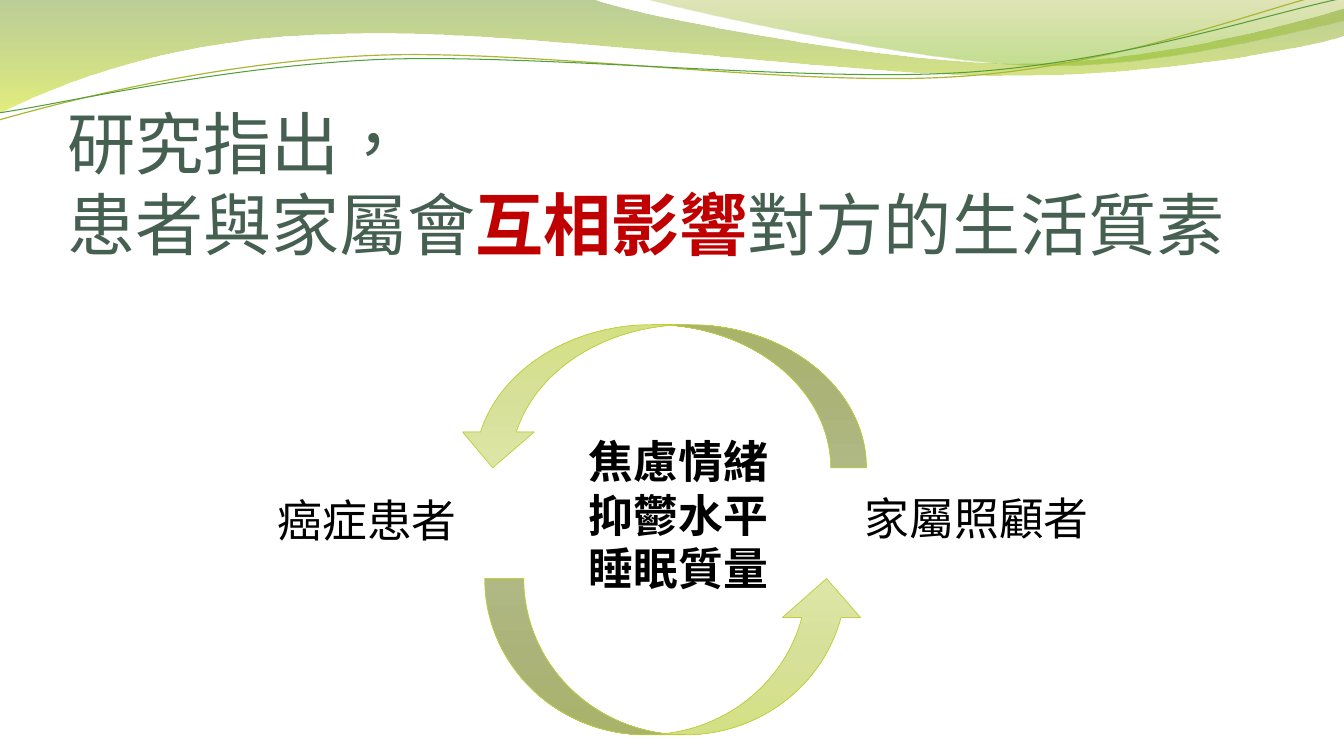
from lxml import etree
from pptx import Presentation
from pptx.dml.color import RGBColor
from pptx.enum.shapes import MSO_SHAPE
from pptx.enum.text import MSO_ANCHOR, PP_ALIGN
from pptx.oxml import parse_xml
from pptx.oxml.ns import qn
from pptx.util import Inches, Pt

ARROW = MSO_SHAPE.CURVED_UP_ARROW
BOTTOM = MSO_ANCHOR.BOTTOM
LEFT, CENTER = PP_ALIGN.LEFT, PP_ALIGN.CENTER
W, H = 13.33, 7.5
FONT = "Noto Sans CJK SC"
UNITS = 1000  # freeform units per inch
A_NS = "http://schemas.openxmlformats.org/drawingml/2006/main"

# Waves: start point, then cubic curves (6 numbers) or straight lines (2 numbers)
BANDS = [
    ([(0, 0), (5.87, -0.01), (6.34, 0.17, 8.84, 0.63, 10.11, 0.63),
      (11.37, 0.63, 12.77, 0.26, 13.33, 0.09), (13.34, 0.36),
      (13.11, 0.44, 11.59, 0.76, 9.94, 0.75),
      (8.29, 0.75, 5.09, 0.28, 3.43, 0.34),
      (1.72, 0.36, 0.61, 0.83, -0.02, 1.13)],
     [(0, "69921C", 45), (100, "CCE10F", 55)]),
    ([(6.38, -0.01), (6.79, 0.11, 9.09, 0.62, 10.25, 0.65),
      (11.4, 0.69, 12.82, 0.32, 13.33, 0.21), (13.33, 0)],
     [(0, "9BAA1A", 30), (80, "81BA16", 45)]),
]
STRANDS = [
    ([(-0.01, 1.19), (0.63, 1.01, 2.1, 0.62, 3.69, 0.55),
      (5.27, 0.48, 7.89, 0.87, 9.49, 0.76),
      (11.1, 0.66, 12.51, 0.08, 13.3, -0.1)], "A9B733", 0.85),
    ([(-0.01, 1.12), (0.62, 1.03, 2.18, 0.66, 3.77, 0.59),
      (5.37, 0.53, 7.96, 0.82, 9.55, 0.72),
      (11.14, 0.62, 12.55, 0.14, 13.33, -0.02)], "549E39", 0.75),
]
ARROW_STOPS = [(0, "DDE6A6", 100), (50, "D7E098", 100), (100, "D4E084", 100)]


def color(value):
    return RGBColor.from_string(value)


def set_line(shape, value, width):
    shape.line.color.rgb = color(value)
    shape.line.width = Pt(width)


def set_gradient(shape, stops):
    """Fill from top to bottom; each stop is position, colour, opacity."""
    shape.fill.background()
    gs = "".join(
        f'<a:gs pos="{pos * 1000}"><a:srgbClr val="{value}">'
        f'<a:alpha val="{opacity * 1000}"/></a:srgbClr></a:gs>'
        for pos, value, opacity in stops)
    grad = parse_xml(f'<a:gradFill xmlns:a="{A_NS}" rotWithShape="1"><a:gsLst>{gs}'
                     '</a:gsLst><a:lin ang="5400000" scaled="0"/></a:gradFill>')
    spPr = shape.element.spPr
    spPr.replace(spPr.find(qn("a:noFill")), grad)


def set_font(font, size, value, bold=False):
    font.name, font.size, font.bold = FONT, Pt(size), bold
    font.color.rgb = color(value)


def format_frame(tf, align):
    tf.word_wrap = True
    tf.vertical_anchor = BOTTOM
    tf.margin_left = tf.margin_right = tf.margin_bottom = 0
    tf.margin_top = Inches(0.05)
    for p in tf.paragraphs:
        p.alignment = align
        # Chinese language and typeface for every run
        for r in p.runs:
            r.font.name = FONT
            rPr = r.font._element
            rPr.set("lang", "zh-TW")
            etree.SubElement(rPr, qn("a:ea")).set("typeface", FONT)


def add_wave(s, segments, close):
    """Draw the corner points, then join each curve's three into a cubic."""
    points = [(seg[i] * UNITS, seg[i + 1] * UNITS)
              for seg in segments for i in range(0, len(seg), 2)]
    builder = s.shapes.build_freeform(*points[0], scale=Inches(1) / UNITS)
    builder.add_line_segments(points[1:], close=close)
    sp = builder.convert_to_shape()
    lines = iter(list(sp.element.iter(qn("a:lnTo"))))
    for seg in segments[1:]:
        first = next(lines)
        if len(seg) == 6:
            first.tag = qn("a:cubicBezTo")
            for line in (next(lines), next(lines)):
                first.append(line[0])
                line.getparent().remove(line)
    sp.shadow.inherit = False
    return sp


def add_header(s):
    for segments, stops in BANDS:
        sp = add_wave(s, segments, True)
        set_gradient(sp, stops)
        sp.line.fill.background()
    for segments, value, width in STRANDS:
        sp = add_wave(s, segments, False)
        sp.fill.background()
        set_line(sp, value, width)


def add_title(s, x, y, w, h):
    title = s.shapes.title
    title.left, title.top, title.width, title.height = map(Inches, (x, y, w, h))
    tf = title.text_frame
    p = tf.paragraphs[0]
    for text, value, bold in [("研究指出，", "455F51", False),
                              ("患者與家屬會", "455F51", False),
                              ("互相影響", "C00000", True),
                              ("對方的生活質素", "455F51", False)]:
        r = p.add_run()
        r.text = text
        set_font(r.font, 48.6, value, bold)
        if text.endswith("，"):
            p.add_line_break()
    format_frame(tf, LEFT)


def add_label(s, lines, x, y, w, h, bold=False):
    tf = s.shapes.add_textbox(*map(Inches, (x, y, w, h))).text_frame
    tf.text = "\n".join(lines)
    for p in tf.paragraphs:
        set_font(p.font, 32, "000000", bold)
    format_frame(tf, CENTER)


def add_arrow(s, x, y, w, h, rotation=0):
    sp = s.shapes.add_shape(ARROW, *map(Inches, (x, y, w, h)))
    sp.rotation = rotation
    sp.shadow.inherit = False
    set_gradient(sp, ARROW_STOPS)
    set_line(sp, "C0CF3A", 0.5)


def add_cycle(s, x, y, w, h):
    """Two arrows circling the shared effects, with one party on each side."""
    side_w, side_h = 0.32 * w, 0.2 * h
    add_arrow(s, x + 0.26 * w, y, 0.457 * w, 0.349 * h, 180)
    add_arrow(s, x + 0.291 * w, y + 0.619 * h, 0.425 * w, 0.381 * h)
    add_label(s, ["焦慮情緒", "抑鬱水平", "睡眠質量"],
              x + 0.334 * w, y + 0.305 * h, 0.346 * w, 0.354 * h, True)
    add_label(s, ["家屬照顧者"], x + w - side_w, y + 0.337 * h, side_w, side_h)
    add_label(s, ["癌症患者"], x, y + 0.342 * h, side_w, side_h)


def main():
    prs = Presentation()
    prs.slide_width, prs.slide_height = Inches(W), Inches(H)
    s = prs.slides.add_slide(prs.slide_layouts[5])
    add_header(s)
    add_title(s, 0.05 * W, 0.183 * H, 0.9 * W, 0.167 * H)
    add_cycle(s, 2.22, 3.22, 8.89, 4.07)
    prs.save("out.pptx")


if __name__ == "__main__":
    main()
